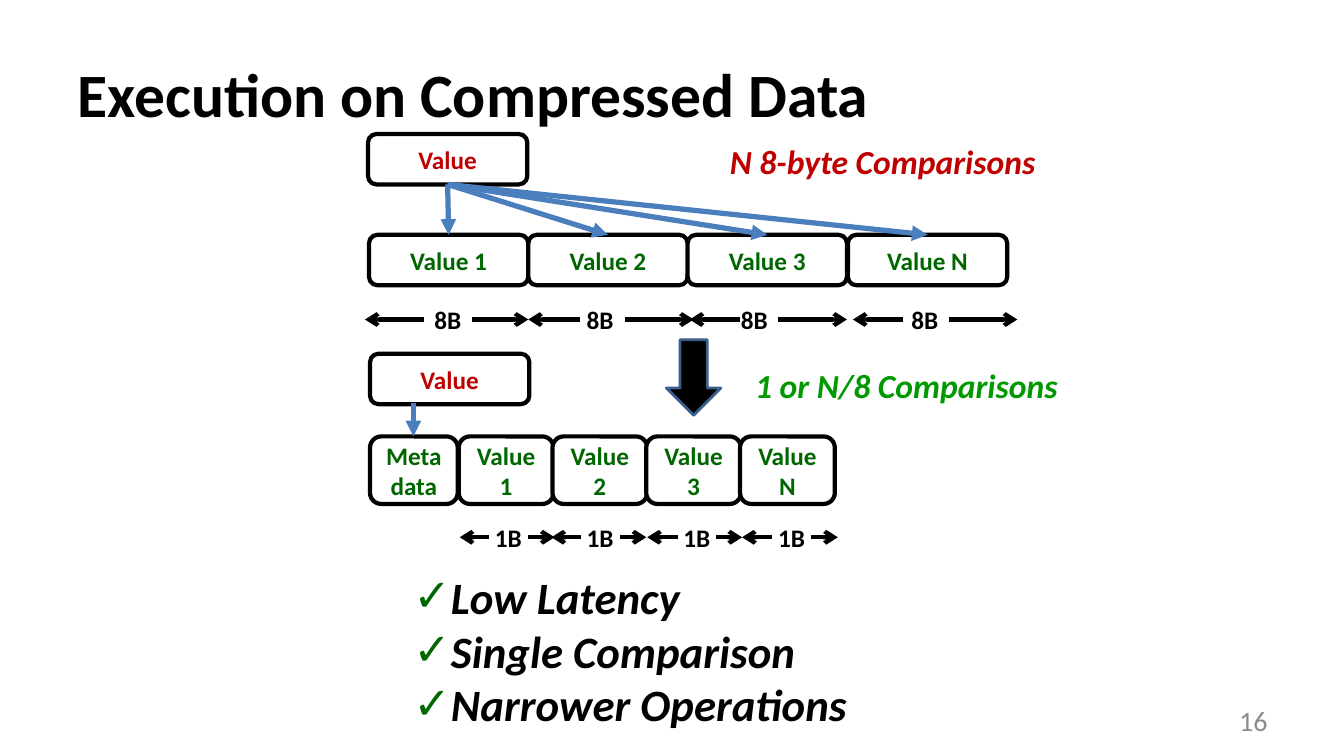
from lxml.etree import SubElement as Sub
from pptx import Presentation
from pptx.dml.color import RGBColor as Rgb
from pptx.enum.shapes import MSO_CONNECTOR as Con, MSO_SHAPE as Geo
from pptx.enum.text import MSO_ANCHOR as Anchor, MSO_AUTO_SIZE as Fit, PP_ALIGN as Align
from pptx.oxml.ns import qn
from pptx.util import Pt

PX = 9144  # EMU in one px, 100 px to the inch
FONT = "Calibri"
HUES = {
    "black": "000000", "white": "FFFFFF", "gray": "8C8C8C",
    "red": "C00000", "green": "006600", "lime": "009900",
    "blue": "4B7EBC", "navy": "3A5F8C",
}


def hue(name):
    return Rgb.from_string(HUES[name])


class Deck:
    def __init__(self, wide, high):
        self.prs = Presentation()
        self.prs.slide_width, self.prs.slide_height = wide * PX, high * PX
        self.slide = self.prs.slides.add_slide(self.prs.slide_layouts[1])
        self.shapes = self.slide.shapes

    def run(self, para, text, size, color, bold=True, slant=False):
        font = para.add_run()
        font.text = text
        font = font.font
        font.name, font.size, font.bold, font.italic = FONT, Pt(size), bold, slant
        font.color.rgb = hue(color)

    def place(self, shape, x, y, w, h):
        shape.left, shape.top, shape.width, shape.height = x * PX, y * PX, w * PX, h * PX

    def title(self, text, *area):
        shape = self.shapes.title
        self.place(shape, *area)
        frame = shape.text_frame
        frame.auto_size, frame.vertical_anchor = Fit.NONE, Anchor.MIDDLE
        para = frame.paragraphs[0]
        para.alignment = Align.LEFT
        self.run(para, text, 44, "black")

    def checks(self, items, *area):
        shape = self.slide.placeholders[1]
        self.place(shape, *area)
        frame = shape.text_frame
        frame.auto_size = Fit.NONE
        for i, item in enumerate(items):
            para = frame.add_paragraph() if i else frame.paragraphs[0]
            para.space_before = Pt(0)
            props = para._p.get_or_add_pPr()
            props.set("marL", str(31 * PX))
            props.set("indent", str(-31 * PX))
            tint = Sub(props, qn("a:buClr"))
            Sub(tint, qn("a:srgbClr"), val=HUES["green"])
            Sub(props, qn("a:buChar"), char="✓")
            self.run(para, item, 32, "black", slant=True)

    def text(self, text, x, y, w, h, size, color, wrap=True, align=Align.LEFT,
             anchor=Anchor.TOP, **style):
        box = self.shapes.add_textbox(x * PX, y * PX, w * PX, h * PX)
        frame = box.text_frame
        frame.word_wrap, frame.vertical_anchor = wrap, anchor
        para = frame.paragraphs[0]
        para.alignment = align
        self.run(para, text, size, color, **style)

    def shape(self, geo, x, y, w, h, fill, line, width):
        shape = self.shapes.add_shape(geo, x * PX, y * PX, w * PX, h * PX)
        shape.shadow.inherit = False
        shape.fill.solid()
        shape.fill.fore_color.rgb = hue(fill)
        shape.line.color.rgb = hue(line)
        shape.line.width = Pt(width)
        return shape

    def cell(self, text, x, y, w, h, color="green"):
        shape = self.shape(Geo.ROUNDED_RECTANGLE, x, y, w, h, "white", "black", 3)
        frame = shape.text_frame
        frame.word_wrap, frame.vertical_anchor = True, Anchor.MIDDLE
        para = frame.paragraphs[0]
        para.alignment = Align.CENTER
        self.run(para, text, 18, color)

    def arrow(self, x1, y1, x2, y2, color="black", width=3, head="arrow"):
        line = self.shapes.add_connector(Con.STRAIGHT, x1 * PX, y1 * PX, x2 * PX, y2 * PX)
        line.line.color.rgb = hue(color)
        line.line.width = Pt(width)
        Sub(line.line._get_or_add_ln(), qn("a:tailEnd"), type=head)
        Sub(line.element.spPr, qn("a:effectLst"))

    def link(self, x1, y1, x2, y2):
        self.arrow(x1, y1, x2, y2, "blue", 3.75, "triangle")

    def spans(self, label, y, marks):
        for x, tip, left, right, end in marks:
            self.arrow(left, y, tip, y)
            self.arrow(right, y, end, y)
            self.text(label, x, y - 20, 47, 40, 18, "black", wrap=False)


def main():
    deck = Deck(1333, 750)
    deck.title("Execution on Compressed Data", 67, 30, 1200, 125)
    deck.text("16", 956, 695, 311, 40, 20, "gray", align=Align.RIGHT,
              anchor=Anchor.MIDDLE, bold=False)

    names = ["Value 1", "Value 2", "Value 3", "Value N"]
    wide = 158

    # Plain data: one value against N wide cells
    starts = [366 + 475 * i // 3 for i in range(4)]
    for name, x in zip(names, starts):
        deck.cell(name, x, 233, wide, 50)
    deck.spans("8B", 317, [
        (421, 362, 421, 468, 524), (572, 524, 575, 620, 688),
        (725, 684, 734, 772, 840), (894, 846, 896, 941, 1009),
    ])
    deck.cell("Value", 365, 133, wide, 50, "red")
    for x in starts:
        deck.link(444, 183, x + wide // 2, 233)
    deck.text("N 8-byte Comparisons", 714, 135, 350, 50, 24, "red", slant=True)

    # Step down to the packed form
    deck.shape(Geo.DOWN_ARROW, 661, 337, 54, 75, "black", "navy", 2)

    # Packed data: one value against the metadata
    deck.cell("Metadata", 367, 433, 87, 67)
    for i, name in enumerate(names):
        deck.cell(name, 455 + 93 * i, 433, 94, 67)
    deck.spans("1B", 533, [
        (481, 456, 485, 524, 550), (572, 547, 576, 615, 641),
        (668, 642, 672, 710, 736), (762, 736, 766, 804, 831),
    ])
    deck.cell("Value", 367, 351, wide, 50, "red")
    deck.link(410, 400, 410, 433)
    deck.text("1 or N/8 Comparisons", 739, 357, 386, 50, 24, "lime", slant=True)

    # Gains
    deck.checks(["Low Latency", "Single Comparison", "Narrower Operations"],
                400, 560, 648, 190)
    deck.prs.save("out.pptx")


if __name__ == "__main__":
    main()
